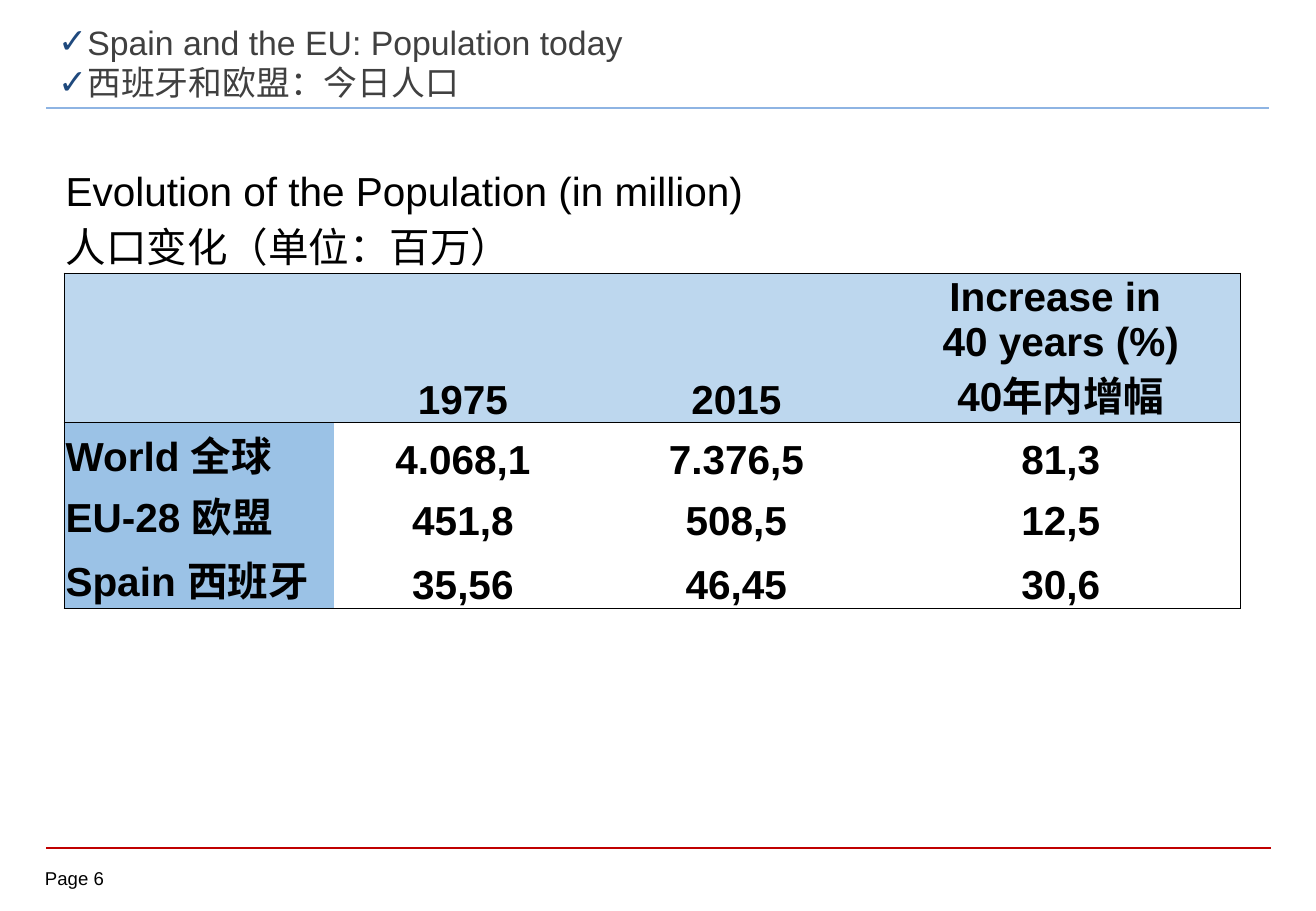
from lxml.etree import SubElement
from pptx import Presentation
from pptx.dml.color import RGBColor
from pptx.enum.shapes import MSO_CONNECTOR
from pptx.enum.text import MSO_ANCHOR, MSO_AUTO_SIZE, PP_ALIGN
from pptx.oxml.ns import qn
from pptx.util import Inches, Pt

BLACK = RGBColor(0x00, 0x00, 0x00)
WHITE = RGBColor(0xFF, 0xFF, 0xFF)
GREY = RGBColor(0x40, 0x40, 0x40)
NAVY = RGBColor(0x1F, 0x49, 0x7D)
RED = RGBColor(0xC0, 0x00, 0x00)
RULE_BLUE = RGBColor(0x8E, 0xB4, 0xE3)
HEAD_BLUE = RGBColor(0xBD, 0xD7, 0xEE)
SIDE_BLUE = RGBColor(0x9B, 0xC2, 0xE6)

W, H = Inches(10.83), Inches(7.5)
COLUMNS = (222, 212, 238, 296)
ROWS = (86, 123, 50, 50, 53)
CAPTION = "Evolution of the Population (in million)\n人口变化（单位：百万）"
POPULATION = (
    ("", "1975", "2015", "Increase in \n40 years (%)\n40年内增幅"),
    ("World 全球", "4.068,1", "7.376,5", "81,3"),
    ("EU-28 欧盟", "451,8", "508,5", "12,5"),
    ("Spain 西班牙", "35,56", "46,45", "30,6"),
)


def area(x, y, w, h):
    """Turn percentages of the slide into a box."""
    return int(W * x / 100), int(H * y / 100), int(W * w / 100), int(H * h / 100)


def add_bullet(p):
    """Give a paragraph a hanging check mark."""
    pPr = p._p.get_or_add_pPr()
    pPr.set("marL", "0")
    pPr.set("indent", str(-Inches(0.38)))
    color = SubElement(pPr, qn("a:buClr"))
    SubElement(color, qn("a:srgbClr"), val=str(NAVY))
    SubElement(pPr, qn("a:buSzPct"), val="103000")
    SubElement(pPr, qn("a:buFont"), typeface="Arial")
    SubElement(pPr, qn("a:buChar"), char="✓")


def write(tf, text, size=24, color=BLACK, bold=False, align=PP_ALIGN.LEFT, bullet=False):
    """Write each line of the text as a formatted paragraph."""
    for i, line in enumerate(text.split("\n")):
        p = tf.add_paragraph() if i else tf.paragraphs[0]
        p.alignment = align
        if bullet:
            add_bullet(p)
        r = p.add_run()
        r.text = line
        r.font.name, r.font.size, r.font.bold = "Arial", Pt(size), bold
        r.font.color.rgb = color


def add_rule(s, box, color, width):
    """Draw a horizontal line along the top of the box."""
    x, y, w, _ = box
    line = s.shapes.add_connector(MSO_CONNECTOR.STRAIGHT, x, y, x + w, y)
    line.line.color.rgb, line.line.width = color, Pt(width)
    SubElement(line._element.spPr, qn("a:effectLst"))


def add_title(s, box):
    """Place the bilingual slide title."""
    tf = s.shapes.add_textbox(*box).text_frame
    tf.word_wrap = True
    tf.auto_size = MSO_AUTO_SIZE.SHAPE_TO_FIT_TEXT
    write(tf, "Spain and the EU: Population today\n西班牙和欧盟：今日人口",
          size=20, color=GREY, align=PP_ALIGN.JUSTIFY, bullet=True)


def add_page_number(s, box):
    """Place the page label without margins."""
    tf = s.shapes.add_textbox(*box).text_frame
    tf.margin_left = tf.margin_right = tf.margin_top = tf.margin_bottom = 0
    write(tf, "Page 6", size=11)


def format_cell(cell, fill, sides):
    """Set margins, fill and the black borders on the named sides."""
    cell.margin_left = cell.margin_right = cell.margin_top = Inches(0.01)
    cell.margin_bottom = 0
    cell.vertical_anchor = MSO_ANCHOR.BOTTOM
    tcPr = cell._tc.get_or_add_tcPr()
    for side in "LRTB":
        ln = SubElement(tcPr, qn(f"a:ln{side}"), w=str(Pt(1)))
        if side in sides:
            solid = SubElement(ln, qn("a:solidFill"))
            SubElement(solid, qn("a:srgbClr"), val=str(BLACK))
        else:
            SubElement(ln, qn("a:noFill"))
    if fill is None:
        cell.fill.background()
    else:
        cell.fill.solid()
        cell.fill.fore_color.rgb = fill


def add_population_table(s, box):
    """Build the population table under its merged caption row."""
    x, y, w, h = box
    table = s.shapes.add_table(len(ROWS), len(COLUMNS), x, y, w, h).table
    table.first_row = table.horz_banding = False
    for column, share in zip(table.columns, COLUMNS):
        column.width = int(w * share / sum(COLUMNS))
    for row, share in zip(table.rows, ROWS):
        row.height = int(h * share / sum(ROWS))

    for c in range(len(COLUMNS)):
        format_cell(table.cell(0, c), None, "B")
    table.cell(0, 0).merge(table.cell(0, len(COLUMNS) - 1))
    write(table.cell(0, 0).text_frame, CAPTION)

    last_row, last_column = len(ROWS) - 1, len(COLUMNS) - 1
    for r, values in enumerate(POPULATION, 1):
        for c, value in enumerate(values):
            sides = "L" * (c == 0) + "R" * (c == last_column)
            sides += "T" * (r <= 2) + "B" * (r in (1, last_row))
            fill = HEAD_BLUE if r == 1 else WHITE if c else SIDE_BLUE
            cell = table.cell(r, c)
            format_cell(cell, fill, sides)
            if value:
                write(cell.text_frame, value, bold=True,
                      align=PP_ALIGN.CENTER if c else PP_ALIGN.LEFT)


def main():
    """Build and save the slide."""
    prs = Presentation()
    prs.slide_width, prs.slide_height = W, H
    s = prs.slides.add_slide(prs.slide_layouts[6])
    add_rule(s, area(3.51, 93.07, 93.07, 0), RED, 1)
    add_rule(s, area(3.51, 11.87, 92.89, 0), RULE_BLUE, 1.5)
    add_page_number(s, area(3.42, 95.2, 6.74, 2.93))
    add_population_table(s, area(4.89, 18.53, 89.4, 48.27))
    add_title(s, area(3.51, 1.73, 94.55, 10.27))
    prs.save("out.pptx")


if __name__ == "__main__":
    main()
